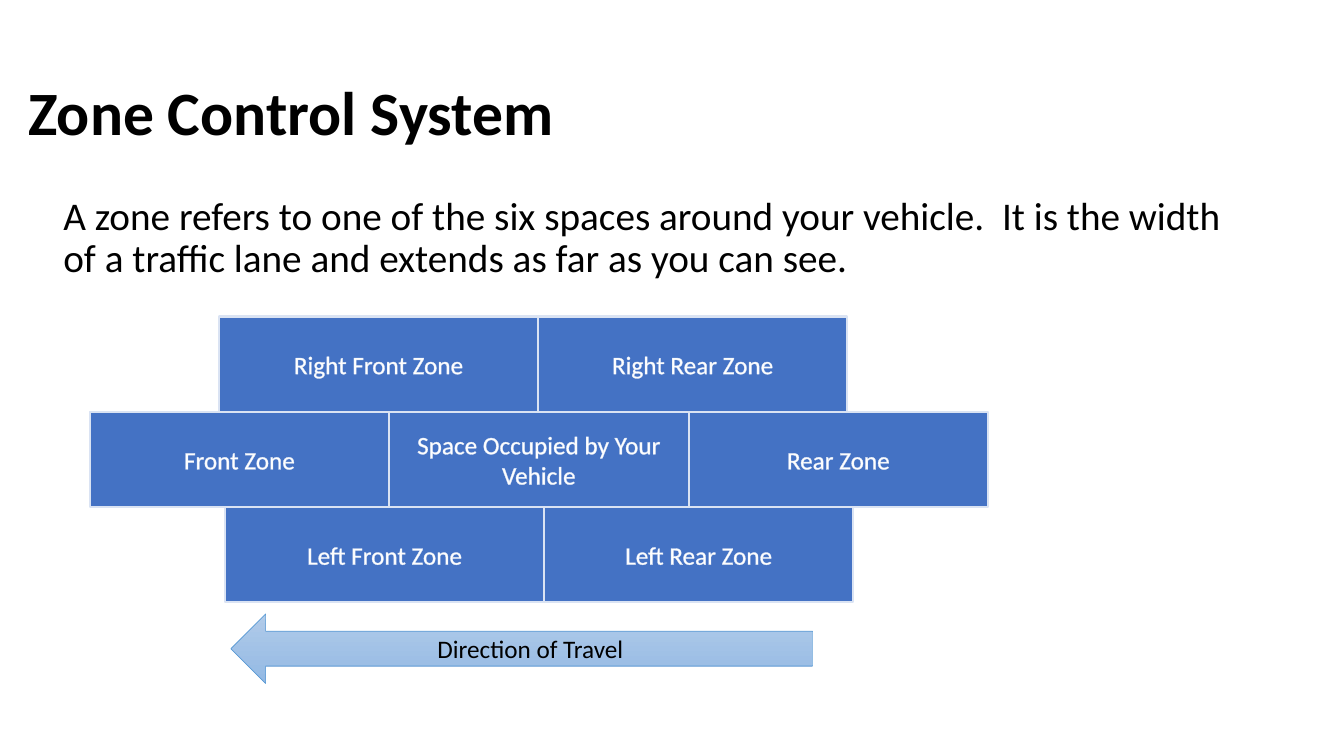
from lxml import etree
from pptx import Presentation
from pptx.dml.color import RGBColor
from pptx.enum.shapes import MSO_SHAPE
from pptx.enum.text import MSO_ANCHOR, PP_ALIGN
from pptx.oxml.ns import qn
from pptx.util import Inches, Pt

RECT, LEFT_ARROW = MSO_SHAPE.RECTANGLE, MSO_SHAPE.LEFT_ARROW
TOP, MIDDLE = MSO_ANCHOR.TOP, MSO_ANCHOR.MIDDLE
LEFT, CENTER = PP_ALIGN.LEFT, PP_ALIGN.CENTER

COLORS = {"text": "000000", "zone": "4472C4", "zone_text": "FFFFFF", "zone_line": "DAE3F3",
          "arrow_top": "B1CBE9", "arrow_bottom": "93B9E4", "arrow_line": "5B9BD5"}

# Rows of the zone diagram: left edge, then (label, width) from front to rear
ROW_HEIGHT = 0.945
ZONE_ROWS = [
    (2.17, [("Right Front Zone", 3.17), ("Right Rear Zone", 3.06)]),
    (0.89, [("Front Zone", 2.97), ("Space Occupied by Your Vehicle", 2.97), ("Rear Zone", 2.97)]),
    (2.23, [("Left Front Zone", 3.17), ("Left Rear Zone", 3.06)]),
]


def rgb(name):
    return RGBColor.from_string(COLORS[name])


def write(sp, text, size, color="text", align=LEFT, anchor=MIDDLE, spacing=None, bold=False):
    tf = sp.text_frame
    tf.word_wrap = True
    tf.vertical_anchor = anchor
    p = tf.paragraphs[0]
    p.alignment, p.line_spacing = align, spacing
    r = p.add_run()
    r.text = text
    for key, value in {"name": "Calibri", "size": Pt(size), "bold": bold}.items():
        setattr(r.font, key, value)
    r.font.color.rgb = rgb(color)
    return r


def add_box(slide, kind, box, line, line_width):
    sp = slide.shapes.add_shape(kind, *map(Inches, box))
    sp.shadow.inherit = False
    sp.line.color.rgb = rgb(line)
    sp.line.width = Pt(line_width)
    return sp


def outline_text(r, color, width):
    ln = etree.Element(qn("a:ln"), w=str(Pt(width)))
    fill = etree.SubElement(ln, qn("a:solidFill"))
    etree.SubElement(fill, qn("a:srgbClr"), val=COLORS[color])
    r.font._element.insert(0, ln)


def add_title(slide, box):
    title = slide.shapes.title
    title.left, title.top, title.width, title.height = map(Inches, box)
    write(title, "Zone Control System", 44, spacing=0.9, bold=True)


def add_definition(slide, box):
    sp = slide.shapes.add_textbox(*map(Inches, box))
    write(sp, "A zone refers to one of the six spaces around your vehicle.  It is the width "
              "of a traffic lane and extends as far as you can see.", 28, anchor=TOP, spacing=0.9)


def add_zones(slide, top):
    for row, (x, zones) in enumerate(ZONE_ROWS):
        for label, width in zones:
            box = (x, top + row * ROW_HEIGHT, width, ROW_HEIGHT)
            sp = add_box(slide, RECT, box, "zone_line", 1.5)
            sp.fill.solid()
            sp.fill.fore_color.rgb = rgb("zone")
            outline_text(write(sp, label, 18, "zone_text", CENTER), "zone_line", 0.75)
            x += width


def add_travel_arrow(slide, box):
    sp = add_box(slide, LEFT_ARROW, box, "arrow_line", 0.5)
    sp.fill.gradient()
    sp.fill.gradient_angle = 270
    for stop, name in zip(sp.fill.gradient_stops, ("arrow_top", "arrow_bottom")):
        stop.color.rgb = rgb(name)
    write(sp, "Direction of Travel", 18, align=CENTER)


def main():
    prs = Presentation()
    prs.slide_width, prs.slide_height = Inches(13.33), Inches(7.5)
    s = prs.slides.add_slide(prs.slide_layouts[5])
    add_title(s, (0.18, 0.42, 11.5, 1.45))
    add_definition(s, (0.53, 1.9, 12.08, 1.1))
    add_zones(s, 3.14)
    add_travel_arrow(s, (2.29, 6.09, 5.77, 0.69))
    prs.save("out.pptx")


if __name__ == "__main__":
    main()
